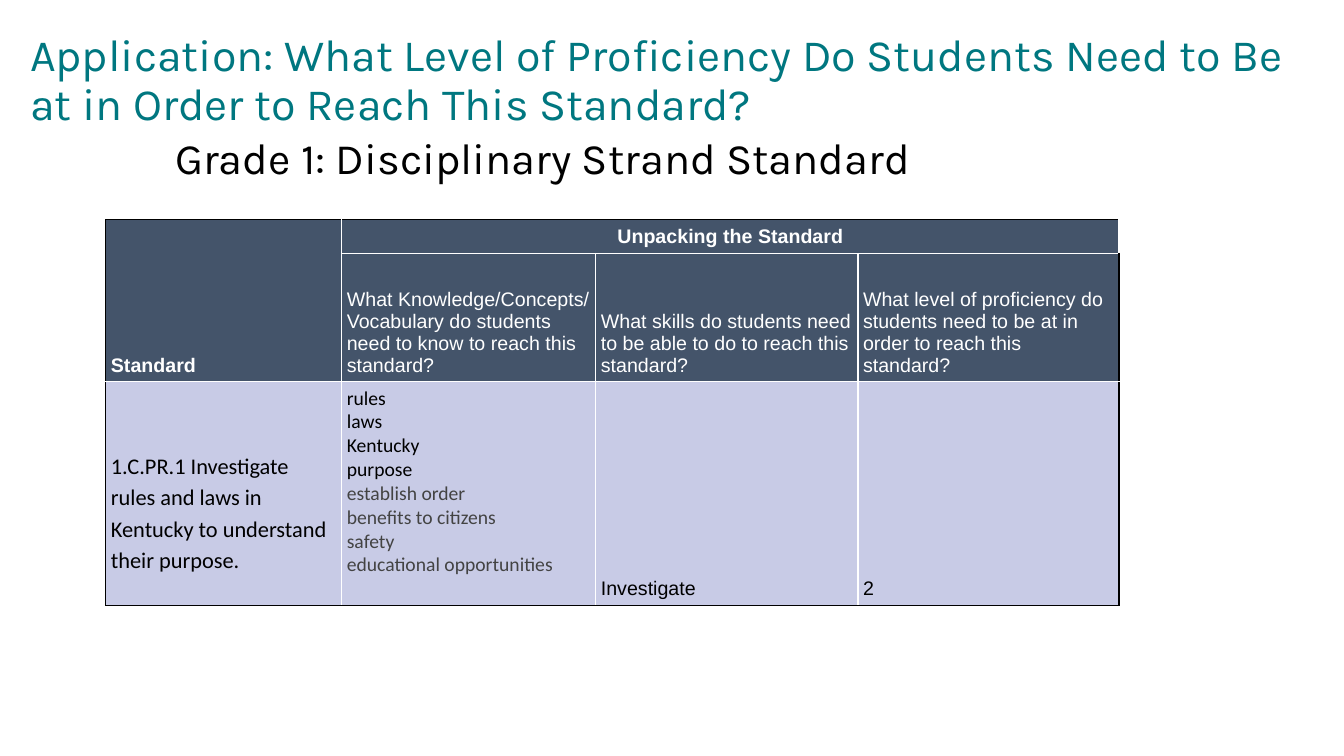
from lxml import etree
from pptx import Presentation
from pptx.dml.color import RGBColor
from pptx.enum.text import MSO_ANCHOR, PP_ALIGN
from pptx.oxml.ns import qn
from pptx.util import Inches, Pt

BOTTOM, MIDDLE = MSO_ANCHOR.BOTTOM, MSO_ANCHOR.MIDDLE
LEFT, CENTER = PP_ALIGN.LEFT, PP_ALIGN.CENTER
WHITE, BLACK, GRAY, TEAL = "FFFFFF", "000000", "434343", "007780"
SLATE, LILAC = "44546A", "C8CBE6"
COLS = [2.34, 2.52, 2.6, 2.59]
ROWS = [0.33, 1.27, 2.22]
HEADS = [
    "What Knowledge/Concepts/ Vocabulary do students need to know to reach this standard?",
    "What skills do students need to be able to do to reach this standard?",
    "What level of proficiency do students need to be at in order to reach this standard?",
]
GOAL = "1.C.PR.1 Investigate rules and laws in Kentucky to understand their purpose."
TERMS = ["rules", "laws", "Kentucky", "purpose"]
GAINS = ["establish order", "benefits to citizens", "safety", "educational opportunities"]


def color(code):
    return RGBColor.from_string(code)


def add_run(para, text, size, face, code, bold=False):
    run = para.add_run()
    run.text = text
    font = run.font
    font.size, font.name, font.bold = Pt(size), face, bold
    font.color.rgb = color(code)


def add_text(slide, box, text, size, code):
    frame = slide.shapes.add_textbox(*map(Inches, box)).text_frame
    frame.word_wrap = True
    para = frame.paragraphs[0]
    para.line_spacing = 0.9
    add_run(para, text, size, "Karla", code)


def fill_cell(cell, lines, size=14, face="Arial", bold=False, align=LEFT,
              anchor=BOTTOM, space=None, foot=0.05):
    """Write (text, colour) lines; foot is the bottom margin in inches."""
    cell.vertical_anchor = anchor
    cell.margin_bottom = Inches(foot)
    frame = cell.text_frame
    for i, (text, code) in enumerate(lines):
        para = frame.add_paragraph() if i else frame.paragraphs[0]
        para.alignment = align
        if space:
            para.line_spacing = space
        add_run(para, text, size, face, code, bold)


def set_edge(cell, side, code):
    props = cell._tc.get_or_add_tcPr()
    line = etree.SubElement(props, qn(f"a:{side}"), w=str(Pt(1)))
    solid = etree.SubElement(line, qn("a:solidFill"))
    etree.SubElement(solid, qn("a:srgbClr"), val=code)


def style_cell(cell, row, col):
    """Black edges outside the table, white edges inside it."""
    outer = {"lnL": col == 0, "lnR": col == len(COLS) - 1,
             "lnT": row == 0, "lnB": row == len(ROWS) - 1}
    for side, out in outer.items():
        set_edge(cell, side, BLACK if out else WHITE)
    cell.fill.solid()
    cell.fill.fore_color.rgb = color(LILAC if row == 2 else SLATE)
    cell.margin_left = cell.margin_right = cell.margin_top = Inches(0.05)


def add_grid(slide):
    table = slide.shapes.add_table(
        len(ROWS), len(COLS), Inches(1.05), Inches(2.18),
        Inches(sum(COLS)), Inches(sum(ROWS))).table
    for col, width in zip(table.columns, COLS):
        col.width = Inches(width)
    for row, height in zip(table.rows, ROWS):
        row.height = Inches(height)
    for r in range(len(ROWS)):
        for c in range(len(COLS)):
            style_cell(table.cell(r, c), r, c)
    table.cell(0, 0).merge(table.cell(1, 0))
    table.cell(0, 1).merge(table.cell(0, 3))
    return table


def main():
    deck = Presentation()
    deck.slide_width, deck.slide_height = Inches(13.33), Inches(7.5)
    slide = deck.slides.add_slide(deck.slide_layouts[6])
    add_text(slide, (0.2, 0.28, 12.66, 1.44),
             "Application: What Level of Proficiency Do Students Need to Be "
             "at in Order to Reach This Standard?", 32, TEAL)
    add_text(slide, (1.64, 1.31, 10.05, 0.7),
             "Grade 1: Disciplinary Strand Standard", 31, BLACK)

    table = add_grid(slide)
    fill_cell(table.cell(0, 0), [("Standard", WHITE)], bold=True)
    fill_cell(table.cell(0, 1), [("Unpacking the Standard", WHITE)],
              bold=True, align=CENTER, anchor=MIDDLE)
    for c, head in enumerate(HEADS, 1):
        fill_cell(table.cell(1, c), [(head, WHITE)])
    fill_cell(table.cell(2, 0), [(GOAL, BLACK)], 16, "Calibri", space=1.15, foot=0.3)
    terms = [(t, BLACK) for t in TERMS] + [(g, GRAY) for g in GAINS]
    fill_cell(table.cell(2, 1), terms, face="Calibri", foot=0.28)
    fill_cell(table.cell(2, 2), [("Investigate", BLACK)])
    fill_cell(table.cell(2, 3), [("2", BLACK)])
    deck.save("out.pptx")


if __name__ == "__main__":
    main()
